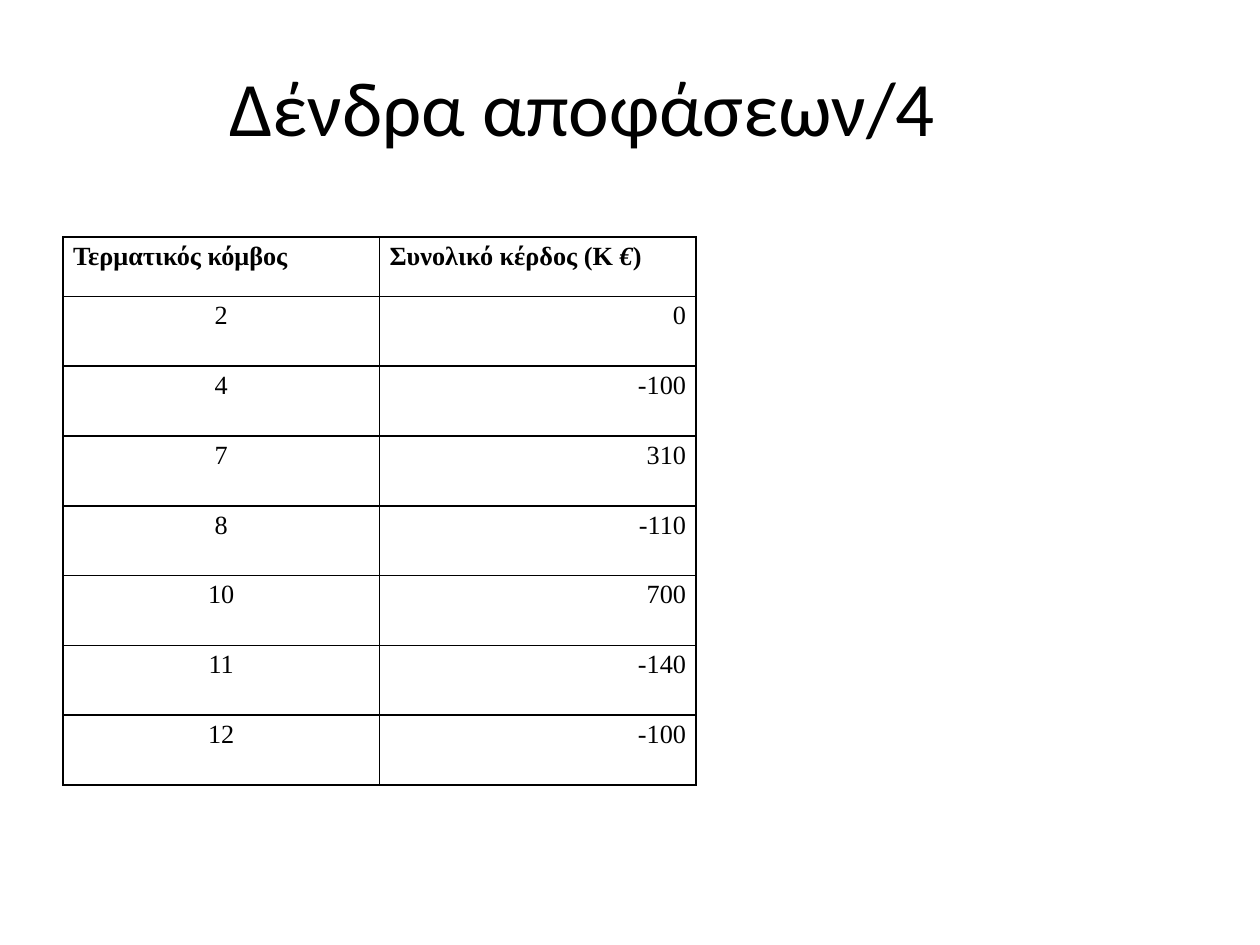
from dataclasses import dataclass

from lxml.etree import SubElement
from pptx import Presentation
from pptx.dml.color import RGBColor
from pptx.enum.text import MSO_ANCHOR, PP_ALIGN
from pptx.oxml.ns import qn
from pptx.util import Pt


@dataclass(frozen=True)
class Theme:
    """Colours, fonts and sizes of the slide."""
    ink: str = "000000"
    paper: str = "FFFFFF"
    title_font: str = "Calibri"
    table_font: str = "Times New Roman"
    title_size: float = 44
    table_size: float = 15
    border_width: float = 1
    hanging: float = 27


THEME = Theme()
HEADINGS = [
    [("Τερματικός κόμβος", False)],
    [("Συνολικό κέρδος (K ", False), ("€", True), (")", False)],
]
PROFITS = [(2, 0), (4, -100), (7, 310), (8, -110), (10, 700), (11, -140), (12, -100)]


def add_text(paragraph, text, *, font, size, bold=False, italic=False, align=None):
    """Append a formatted run to a paragraph."""
    run = paragraph.add_run()
    run.text = text
    run.font.name = font
    run.font.size = Pt(size)
    run.font.bold = bold
    run.font.italic = italic
    run.font.color.rgb = RGBColor.from_string(THEME.ink)
    paragraph.alignment = align


def place_title(slide, text):
    """Move and format the title placeholder."""
    title = slide.shapes.title
    title.left, title.top, title.width, title.height = Pt(36), Pt(9.4), Pt(594), Pt(102)
    title.text_frame.vertical_anchor = MSO_ANCHOR.MIDDLE
    add_text(title.text_frame.paragraphs[0], text, font=THEME.title_font,
             size=THEME.title_size, align=PP_ALIGN.CENTER)


def draw_borders(cell):
    """Give a cell a solid line on all four sides."""
    properties = cell._tc.get_or_add_tcPr()
    for side in ("a:lnL", "a:lnR", "a:lnT", "a:lnB"):
        line = SubElement(properties, qn(side), w=str(Pt(THEME.border_width)))
        SubElement(SubElement(line, qn("a:solidFill")), qn("a:srgbClr"), val=THEME.ink)


def fill_cell(cell, pieces, align, bold=False):
    """Write (text, italic) pieces in a cell and style it."""
    cell.margin_left = cell.margin_right = Pt(5.76)
    cell.margin_top = cell.margin_bottom = Pt(2.88)
    draw_borders(cell)
    cell.fill.background()
    paragraph = cell.text_frame.paragraphs[0]
    for text, italic in pieces:
        add_text(paragraph, text, font=THEME.table_font, size=THEME.table_size,
                 bold=bold, italic=italic, align=align)
    indents = paragraph._p.get_or_add_pPr()
    indents.set("marL", str(Pt(THEME.hanging)))
    indents.set("indent", str(-Pt(THEME.hanging)))


def add_profit_table(slide):
    """Add the table of total profit per terminal node."""
    heading_height, row_height, column_width = 34, 39.9, 180.9
    table = slide.shapes.add_table(
        len(PROFITS) + 1, len(HEADINGS), Pt(36), Pt(135.4), Pt(2 * column_width),
        Pt(heading_height + len(PROFITS) * row_height)).table
    table.first_row = table.horz_banding = False
    for column in table.columns:
        column.width = Pt(column_width)
    for index, row in enumerate(table.rows):
        row.height = Pt(row_height if index else heading_height)
    for column, pieces in enumerate(HEADINGS):
        fill_cell(table.cell(0, column), pieces, PP_ALIGN.JUSTIFY, bold=True)
    for row, (node, profit) in enumerate(PROFITS, start=1):
        fill_cell(table.cell(row, 0), [(str(node), False)], PP_ALIGN.CENTER)
        fill_cell(table.cell(row, 1), [(str(profit), False)], PP_ALIGN.RIGHT)


def main():
    """Build and save the slide."""
    deck = Presentation()
    deck.slide_width, deck.slide_height = Pt(720), Pt(540)
    slide = deck.slides.add_slide(deck.slide_layouts[5])
    slide.background.fill.solid()
    slide.background.fill.fore_color.rgb = RGBColor.from_string(THEME.paper)
    place_title(slide, "Δένδρα αποφάσεων/4")
    add_profit_table(slide)
    deck.save("out.pptx")


if __name__ == "__main__":
    main()
